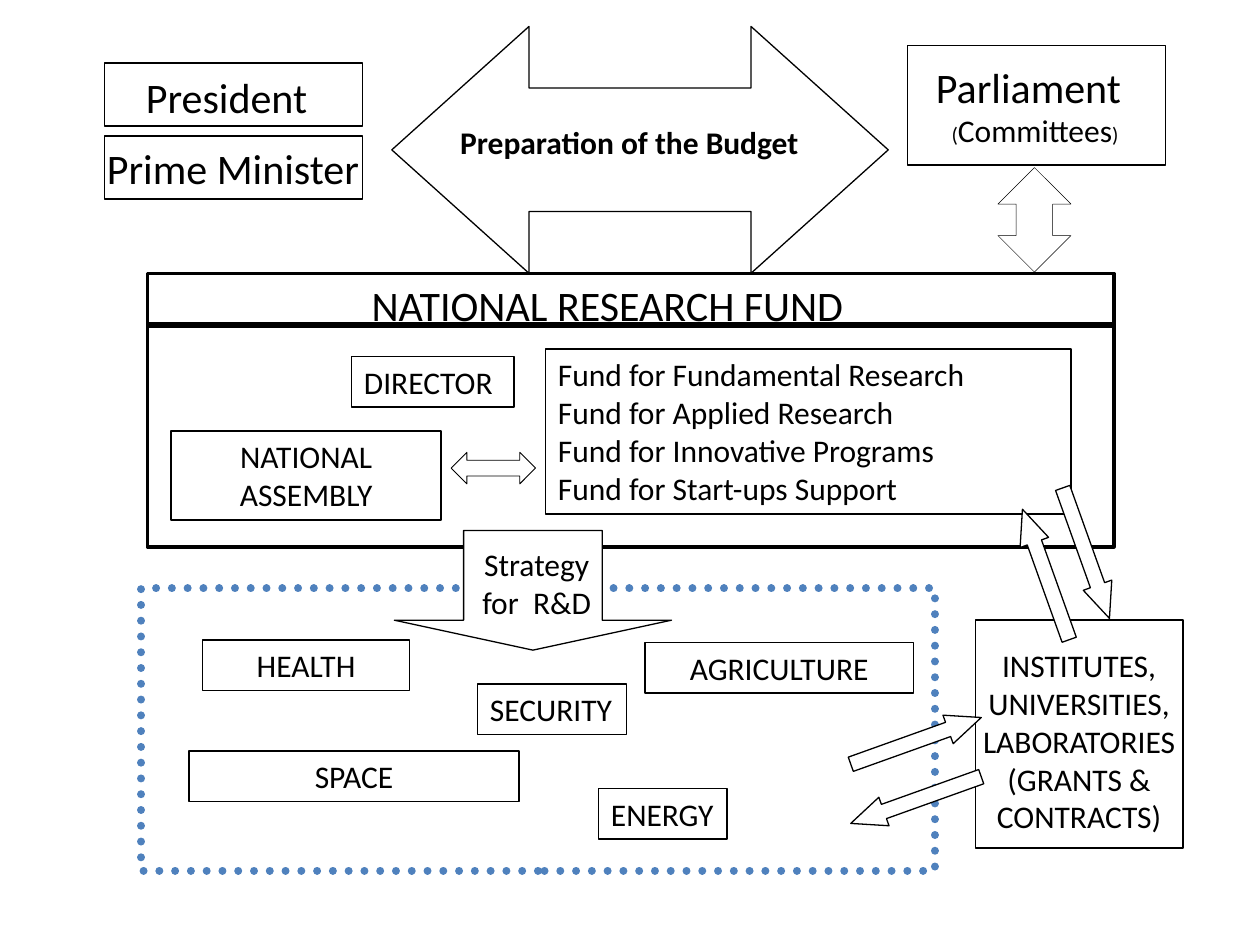
import pptx
import pptx.dml.color
import pptx.enum.dml
import pptx.enum.shapes
import pptx.enum.text
import pptx.oxml.ns
import pptx.oxml.xmlchemy
import pptx.util
from pptx.util import Inches, Pt

SHAPE = pptx.enum.shapes.MSO_SHAPE
ALIGN = pptx.enum.text.PP_ALIGN
BLACK, WHITE, BLUE = "000000", "FFFFFF", "4F81BD"
FONT = "Calibri"

# Places are left, top, width, height in inches.
OUTLINES = [  # place, line width
    ((0.83, 0.5, 2.05, 0.5), 0.75),
    ((0.83, 1.08, 2.05, 0.5), 0.75),
    ((7.2, 0.36, 2.05, 0.95), 0.75),
    ((1.17, 2.17, 7.67, 2.17), 2),
    ((7.74, 4.92, 1.65, 1.81), 0.75),
]
SECTOR_FRAME = (1.12, 4.67, 6.3, 2.24)
FUND_RULE = (1.17, 8.83, 2.58)  # from x, to x, y

BOXES = [  # lines, place, centred, wrapped, line width
    (["Fund for Fundamental Research", "Fund for Applied Research",
      "Fund for Innovative Programs", "Fund for Start-ups Support"],
     (4.33, 2.77, 4.17, 1.31), False, True, 0.75),
    (["DIRECTOR"], (2.79, 2.83, 1.29, 0.4), False, False, 0.75),
    (["NATIONAL ASSEMBLY"], (1.36, 3.42, 2.14, 0.71), True, True, 1),
    (["SECURITY"], (3.79, 5.43, 1.18, 0.4), False, False, 0.75),
    (["ENERGY"], (4.75, 6.26, 1.02, 0.4), False, False, 0.75),
    (["AGRICULTURE"], (5.12, 5.1, 2.13, 0.4), True, True, 0.75),
    (["HEALTH"], (1.61, 5.08, 1.64, 0.4), True, True, 0.75),
    (["SPACE"], (1.5, 5.96, 2.62, 0.4), True, True, 0.75),
]

ARROWS = [  # kind, place, rotation, adjustments, fill, line width
    (SHAPE.LEFT_RIGHT_ARROW, (3.11, 0.21, 3.94, 1.96), 0, (0.5, 0.556), None, 0.75),
    (SHAPE.UP_DOWN_ARROW, (7.92, 1.33, 0.58, 0.83), 0, (), None, 0.25),
    (SHAPE.UP_DOWN_ARROW, (3.79, 3.38, 0.25, 0.67), 90, (), None, 0.5),
    (SHAPE.DOWN_ARROW, (3.13, 4.21, 2.2, 0.95), 0, (0.5, 0.25), WHITE, 0.75),
]
EXCHANGE_SIZE = (1.1, 0.24)
EXCHANGES = [  # left, top, rotation
    (8.07, 4.27, 250.3), (7.75, 4.44, 70.3),
    (6.72, 5.76, 160.3), (6.72, 6.23, 340.3),
]

LABELS = [  # lines, place, size, centred, wrapped, bold
    (["President"], (1.06, 0.52, 1.6, 0.5), 24, False, True, False),
    (["Prime Minister"], (0.75, 1.08, 2.22, 0.5), 24, False, True, False),
    (["Parliament"], (7.33, 0.44, 1.83, 0.5), 24, False, True, False),
    (["Preparation of the Budget"], (3.54, 0.93, 2.91, 0.4), 18, True, False, True),
    (["NATIONAL RESEARCH FUND"], (2.85, 2.17, 3.98, 0.5), 24, False, False, False),
    (["INSTITUTES,", "UNIVERSITIES,", "LABORATORIES (GRANTS & CONTRACTS)"],
     (7.58, 5.08, 1.97, 1.62), 18, True, True, False),
    (["Strategy for  R&D"], (3.66, 4.28, 1.2, 0.71), 18, True, True, False),
]
COMMITTEES = [("(", 12), ("Committees", 18), (")", 12)]
COMMITTEES_PLACE = (7.26, 0.83, 1.91, 0.4)


def rgb(value):
    return pptx.dml.color.RGBColor.from_string(value)


def add_outline(page, kind, place, width, fill=None, color=BLACK):
    shape = page.shapes.add_shape(kind, *map(Inches, place))
    shape.shadow.inherit = False
    if fill:
        shape.fill.solid()
        shape.fill.fore_color.rgb = rgb(fill)
    else:
        shape.fill.background()
    shape.line.color.rgb = rgb(color)
    shape.line.width = Pt(width)
    return shape


def style(font, size, bold=False):
    font.name = FONT
    font.size = Pt(size)
    font.bold = bold
    font.color.rgb = rgb(BLACK)


def write(shape, lines, size, centred, wrapped, bold=False):
    frame = shape.text_frame
    frame.word_wrap = wrapped
    frame.auto_size = pptx.enum.text.MSO_AUTO_SIZE.SHAPE_TO_FIT_TEXT
    frame.vertical_anchor = pptx.enum.text.MSO_ANCHOR.TOP
    frame.text = "\n".join(lines)
    for para in frame.paragraphs:
        para.alignment = ALIGN.CENTER if centred else ALIGN.LEFT
        style(para.font, size, bold)


def add_fund_rule(page):
    start, end, y = map(Inches, FUND_RULE)
    rule = page.shapes.add_connector(
        pptx.enum.shapes.MSO_CONNECTOR.STRAIGHT, start, y, end, y)
    rule.line.color.rgb = rgb(BLACK)
    rule.line.width = Pt(3)
    rule._element.spPr.append(pptx.oxml.xmlchemy.OxmlElement("a:effectLst"))


def add_sector_frame(page):
    frame = add_outline(page, SHAPE.RECTANGLE, SECTOR_FRAME, 4.5, color=BLUE)
    frame.line.dash_style = pptx.enum.dml.MSO_LINE.ROUND_DOT
    frame._element.spPr.find(pptx.oxml.ns.qn("a:ln")).set("cap", "rnd")


def add_committees(page):
    box = page.shapes.add_textbox(*map(Inches, COMMITTEES_PLACE))
    write(box, [], 18, True, True)
    for text, size in COMMITTEES:
        span = box.text_frame.paragraphs[0].add_run()
        span.text = text
        style(span.font, size)


def main():
    deck = pptx.Presentation()
    deck.slide_width, deck.slide_height = Inches(10), Inches(7.5)
    page = deck.slides.add_slide(deck.slide_layouts[6])

    for place, width in OUTLINES:
        add_outline(page, SHAPE.RECTANGLE, place, width)
    add_fund_rule(page)
    add_sector_frame(page)
    for lines, place, centred, wrapped, width in BOXES:
        box = add_outline(page, SHAPE.RECTANGLE, place, width)
        write(box, lines, 18, centred, wrapped)

    exchanges = [(SHAPE.LEFT_ARROW, (left, top, *EXCHANGE_SIZE), turn,
                  (0.5, 1.167), WHITE, 0.75) for left, top, turn in EXCHANGES]
    for kind, place, turn, adjustments, fill, width in ARROWS + exchanges:
        arrow = add_outline(page, kind, place, width, fill)
        arrow.rotation = turn
        for index, value in enumerate(adjustments):
            arrow.adjustments[index] = value

    for lines, place, size, centred, wrapped, bold in LABELS:
        label = page.shapes.add_textbox(*map(Inches, place))
        write(label, lines, size, centred, wrapped, bold)
    add_committees(page)

    deck.save("out.pptx")


if __name__ == "__main__":
    main()
